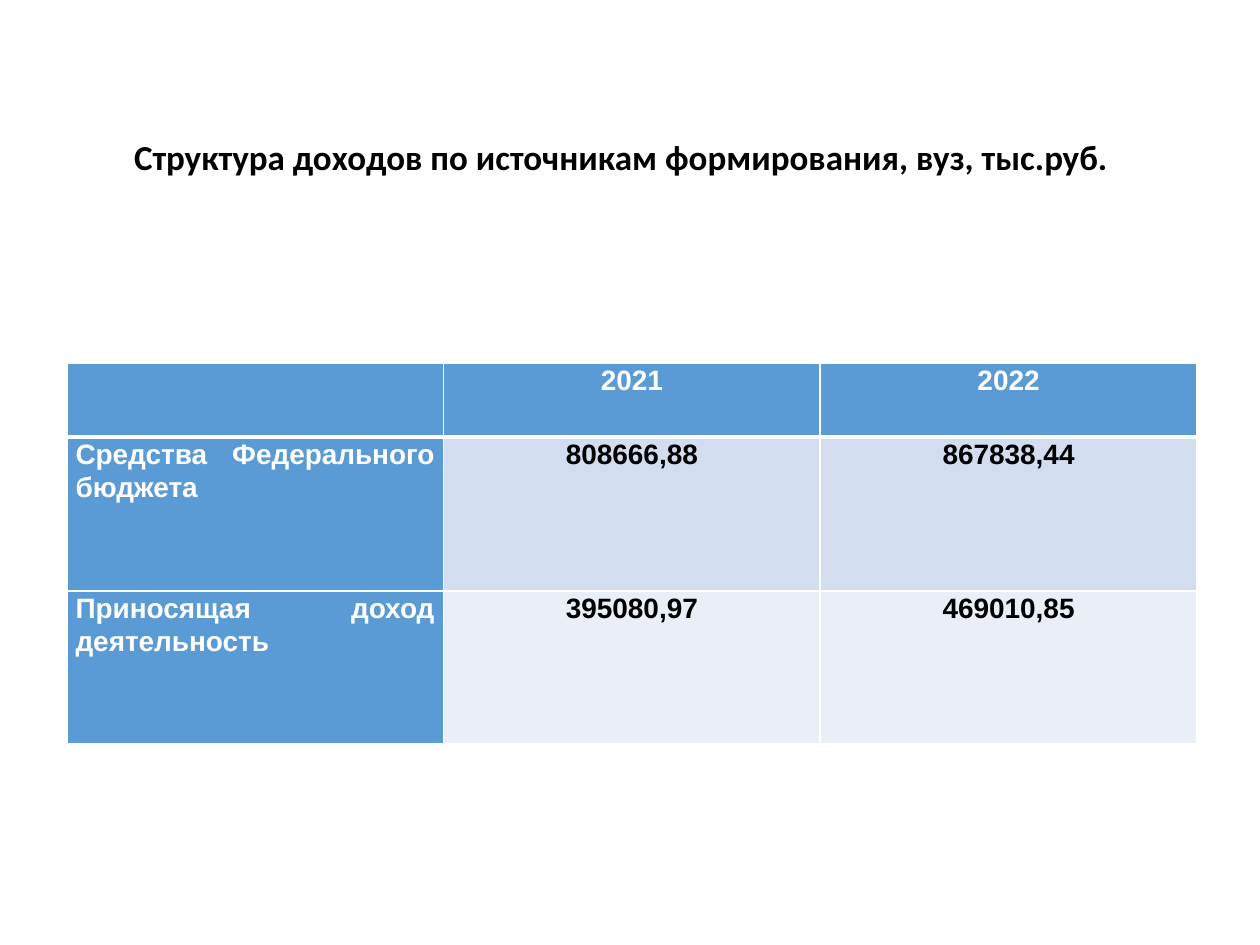
"""Build a slide with a table of income by funding source."""
from lxml.etree import SubElement
from pptx import Presentation
from pptx.dml.color import RGBColor
from pptx.enum.text import MSO_ANCHOR as Anchor, PP_ALIGN as Align
from pptx.oxml.ns import qn
from pptx.util import Inches, Pt

WHITE = RGBColor(0xFF, 0xFF, 0xFF)
BLACK = RGBColor(0x00, 0x00, 0x00)
BLUE = RGBColor(0x5B, 0x9B, 0xD5)
BAND_FILLS = [BLUE, RGBColor(0xD2, 0xDE, 0xEF), RGBColor(0xEA, 0xEF, 0xF7)]

TITLE = "Структура доходов по источникам формирования, вуз, тыс.руб."
ROWS = [
    ["", "2021", "2022"],
    ["Средства Федерального бюджета", "808666,88", "867838,44"],
    ["Приносящая доход деятельность", "395080,97", "469010,85"],
]
ROW_HEIGHTS = [0.59, 1.22, 1.21]
COLUMN_WIDTH = 2.99
CELL_FORMAT = {
    "margin_left": Inches(0.07),
    "margin_right": Inches(0.07),
    "margin_top": 0,
    "margin_bottom": 0,
    "vertical_anchor": Anchor.TOP,
}


def write_text(paragraph, text, alignment, spacing, font_format):
    paragraph.alignment = alignment
    paragraph.line_spacing = spacing
    run = paragraph.add_run()
    run.text = text
    run.font.color.rgb = font_format["color"]
    for name in ("name", "size", "bold"):
        setattr(run.font, name, font_format[name])


def add_border(cell, side, width):
    properties = cell._tc.get_or_add_tcPr()
    line = SubElement(properties, qn(f"a:ln{side}"), w=str(Pt(width)))
    fill = SubElement(line, qn("a:solidFill"))
    SubElement(fill, qn("a:srgbClr"), val=str(WHITE))


presentation = Presentation()
presentation.slide_width = Inches(10)
presentation.slide_height = Inches(7.5)
slide = presentation.slides.add_slide(presentation.slide_layouts[6])

title = slide.shapes.add_textbox(Inches(0.53), Inches(0.5), Inches(8.8), Inches(1.53))
title.text_frame.word_wrap = True
title.text_frame.vertical_anchor = Anchor.MIDDLE
title_font = {"name": "Calibri", "size": Pt(20), "bold": True, "color": BLACK}
write_text(title.text_frame.paragraphs[0], TITLE, Align.CENTER, 0.9, title_font)

table = slide.shapes.add_table(
    len(ROWS), len(ROWS[0]), Inches(0.53), Inches(2.88),
    Inches(COLUMN_WIDTH * len(ROWS[0])), Inches(sum(ROW_HEIGHTS)),
).table
for column in table.columns:
    column.width = Inches(COLUMN_WIDTH)

for row_index, (values, height) in enumerate(zip(ROWS, ROW_HEIGHTS)):
    table.rows[row_index].height = Inches(height)
    for column_index, value in enumerate(values):
        cell = table.cell(row_index, column_index)
        is_header = row_index == 0 or column_index == 0
        for name, setting in CELL_FORMAT.items():
            setattr(cell, name, setting)
        for side in "LRTB":
            thick = (row_index, side) in [(0, "B"), (1, "T")]
            add_border(cell, side, 3 if thick else 1)
        cell.fill.solid()
        cell.fill.fore_color.rgb = BLUE if is_header else BAND_FILLS[row_index]
        if value:
            cell_font = {"name": "Arial", "size": Pt(16), "bold": True,
                         "color": WHITE if is_header else BLACK}
            alignment = Align.CENTER if column_index else Align.JUSTIFY
            write_text(cell.text_frame.paragraphs[0], value, alignment, 1.07, cell_font)

presentation.save("out.pptx")
